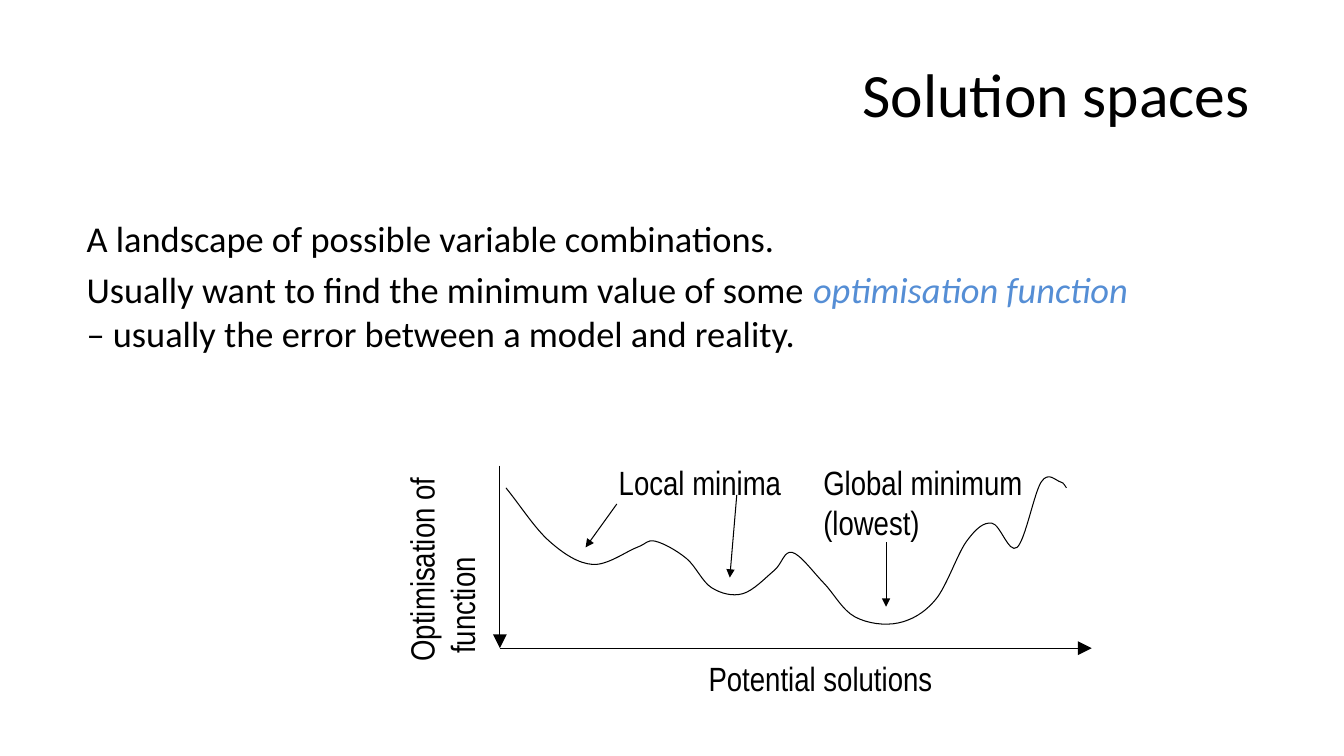
import pptx
from lxml import etree
from pptx.dml.color import RGBColor
from pptx.enum.shapes import MSO_CONNECTOR
from pptx.enum.text import MSO_ANCHOR, MSO_AUTO_SIZE, PP_ALIGN
from pptx.oxml.ns import qn
from pptx.util import Pt

COLORS = {"text": "000000", "line": "000000", "emphasis": "558ED5"}
LINE_WIDTH = 0.75

# Peaks, valleys and slopes that the error curve passes through
CURVE_KNOTS = [
    (361.4, 348.5), (392.4, 386.6), (423.4, 403.2), (455, 391), (468, 386.6),
    (490.3, 398.9), (508.3, 419.8), (530.6, 424.1), (553, 407.5),
    (565.9, 394.6), (588.2, 416.2), (610.6, 440.6), (641.5, 445),
    (668.2, 428.4), (690.5, 386.6), (708.5, 373.7), (726.5, 391),
    (743.8, 344.2), (757.4, 344.2), (761.8, 348.5),
]


def color(name):
    return RGBColor.from_string(COLORS[name])


def style_font(font, name, size):
    font.name = name
    font.size = Pt(size)
    font.color.rgb = color("text")


def style_line(line):
    line.color.rgb = color("line")
    line.width = Pt(LINE_WIDTH)


def add_title(slide, text):
    title = slide.shapes.title
    title.left, title.top = Pt(215.3), Pt(15.1)
    title.width, title.height = Pt(694.8), Pt(102.2)
    title.text_frame.text = text
    title.text_frame.vertical_anchor = MSO_ANCHOR.MIDDLE
    heading = title.text_frame.paragraphs[0]
    heading.alignment = PP_ALIGN.RIGHT
    style_font(heading.font, "Calibri", 44)


def add_explanation(slide, paragraphs):
    """Add body text; each paragraph is a list of (text, emphasised) pairs."""
    box = slide.shapes.add_textbox(Pt(54.7), Pt(151.2), Pt(771.1), Pt(175.7))
    frame = box.text_frame
    frame.word_wrap = True
    for index, pieces in enumerate(paragraphs):
        paragraph = frame.add_paragraph() if index else frame.paragraphs[0]
        paragraph.space_before = Pt(5.2)
        style_font(paragraph.font, "Calibri", 26)
        for text, emphasised in pieces:
            run = paragraph.add_run()
            run.text = text
            if emphasised:
                run.font.italic = True
                run.font.color.rgb = color("emphasis")


def add_label(slide, text, left, top, width, height, rotation=0):
    label = slide.shapes.add_textbox(Pt(left), Pt(top), Pt(width), Pt(height))
    label.rotation = rotation
    frame = label.text_frame
    frame.word_wrap = False
    frame.auto_size = MSO_AUTO_SIZE.SHAPE_TO_FIT_TEXT
    frame.text = text
    for paragraph in frame.paragraphs:
        style_font(paragraph.font, "Arial Narrow", 24)


def add_arrow(slide, start, end, head_size="med"):
    arrow = slide.shapes.add_connector(
        MSO_CONNECTOR.STRAIGHT, *(Pt(value) for value in start + end))
    style_line(arrow.line)
    etree.SubElement(arrow.line._get_or_add_ln(), qn("a:tailEnd"),
                     type="triangle", w=head_size, len=head_size)
    etree.SubElement(arrow._element.spPr, qn("a:effectLst"))


def smooth_path(path):
    """Turn straight segments into Catmull-Rom curves through the same points."""
    knots = [(int(p.get("x")), int(p.get("y"))) for p in path.iter(qn("a:pt"))]

    def mirrored(end, inner):
        return tuple(2 * e - i for e, i in zip(end, inner))

    knots = [mirrored(knots[0], knots[1]), *knots, mirrored(knots[-1], knots[-2])]
    segments = path.findall(qn("a:lnTo"))
    for segment, before, start, end, after in zip(
            segments, knots, knots[1:], knots[2:], knots[3:]):
        control_out = [s + (e - b) / 6 for b, s, e in zip(before, start, end)]
        control_in = [e - (a - s) / 6 for s, e, a in zip(start, end, after)]
        curve = etree.Element(qn("a:cubicBezTo"))
        for x, y in (control_out, control_in, end):
            etree.SubElement(curve, qn("a:pt"), x=str(round(x)), y=str(round(y)))
        path.replace(segment, curve)


def add_curve(slide, knots):
    start, *others = [(Pt(x), Pt(y)) for x, y in knots]
    builder = slide.shapes.build_freeform(*start)
    builder.add_line_segments(others, close=False)
    curve = builder.convert_to_shape()
    curve.shadow.inherit = False
    curve.fill.background()
    style_line(curve.line)
    smooth_path(next(curve._element.iter(qn("a:path"))))


def main():
    presentation = pptx.Presentation()
    presentation.slide_width, presentation.slide_height = Pt(960), Pt(540)
    slide = presentation.slides.add_slide(presentation.slide_layouts[5])

    add_title(slide, "Solution spaces ")
    add_explanation(slide, [
        [("A landscape of possible variable combinations.", False)],
        [("Usually want to find the minimum value of some ", False),
         ("optimisation function", True),
         (" – usually the error between a model and reality.", False)],
    ])

    axis_origin = (357.1, 463)
    add_arrow(slide, (357.1, 332.6), axis_origin, "lg")
    add_arrow(slide, axis_origin, (779.8, 463), "lg")
    add_curve(slide, CURVE_KNOTS)

    add_label(slide, "Potential solutions", 499, 466.6, 176.4, 36)
    add_label(slide, "Optimisation of\n function", 241.9, 373, 147.6, 65.5, 270)
    add_label(slide, "Local minima", 434.9, 326.2, 131.8, 36)
    add_label(slide, "Global minimum\n(lowest)", 581, 326.2, 158.4, 65.5)

    for start, end in [((526.3, 353.5), (521.3, 412.6)),
                       ((632.9, 387.4), (632.9, 433.4)),
                       ((440.6, 360), (418.3, 391))]:
        add_arrow(slide, start, end)

    presentation.save("out.pptx")


if __name__ == "__main__":
    main()
